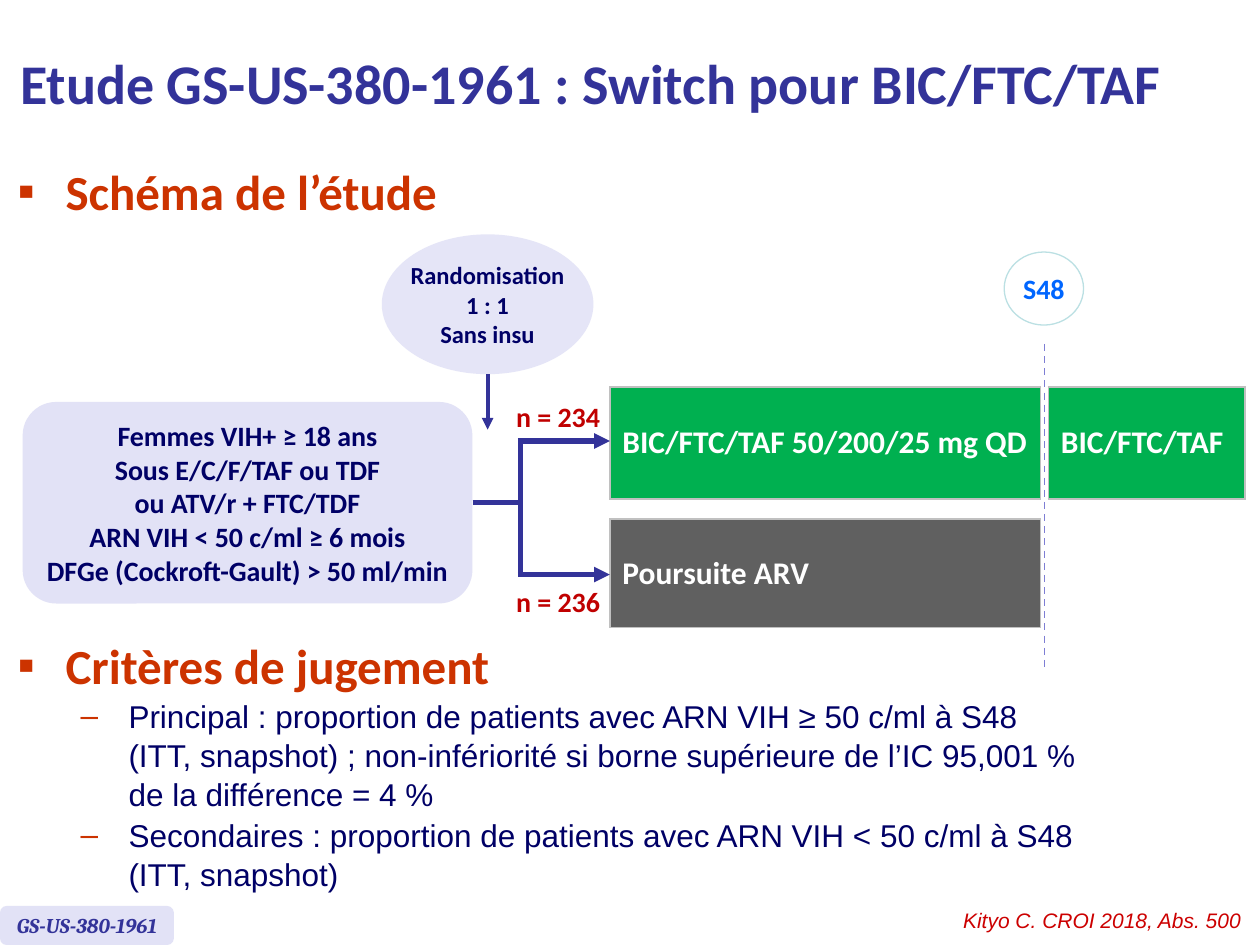
from copy import deepcopy
from typing import NamedTuple, Optional

from lxml.etree import SubElement
from pptx import Presentation
from pptx.dml.color import RGBColor
from pptx.enum.dml import MSO_LINE
from pptx.enum.shapes import MSO_CONNECTOR, MSO_SHAPE
from pptx.enum.text import MSO_ANCHOR, MSO_AUTO_SIZE, PP_ALIGN
from pptx.oxml.ns import qn
from pptx.util import Inches, Pt

COLUMNS, ROWS = 100, 75
UNIT = Inches(0.1)
COLORS = {
    "indigo": "333399", "navy": "000066", "orange": "CC3300", "red": "C00000",
    "citation": "CC0000", "green": "00B050", "gray": "606060", "white": "FFFFFF",
    "lavender": "E2E2F6", "pale": "E5E5F7", "border": "C0C0C0", "aqua": "BBE0E3",
    "blue": "0066FF", "violet": "7E7ED4",
}


class Area(NamedTuple):
    column: float
    row: float
    columns: float
    rows: float


class Node(NamedTuple):
    kind: MSO_SHAPE
    area: Area
    lines: list
    fill: str
    color: str
    size: int
    font: str = "Calibri"
    italic: bool = False
    outline: Optional[str] = None


class Arm(NamedTuple):
    area: Area
    text: str
    fill: str


class Label(NamedTuple):
    area: Area
    text: str
    format: dict


class Line(NamedTuple):
    start: tuple
    end: tuple
    color: str = "indigo"
    width: float = 3
    dashed: bool = False
    arrow: bool = False


class Item(NamedTuple):
    text: str
    level: int = 0


def grid(value: float) -> int:
    return round(value * UNIT)


def place(area: Area) -> list:
    return [grid(value) for value in area]


def rgb(name: str) -> RGBColor:
    return RGBColor.from_string(COLORS[name])


def write(paragraph, text: str, *, size: int, color: str, font: str = "Calibri",
          bold: bool = True, italic: bool = False, align=PP_ALIGN.LEFT) -> None:
    paragraph.text = text
    paragraph.alignment = align
    for run in paragraph.runs:
        run.font.name = font
        run.font.size = Pt(size)
        run.font.bold = bold
        run.font.italic = italic
        run.font.color.rgb = rgb(color)
    for line_break in paragraph._p.findall(qn("a:br")):
        line_break.append(deepcopy(paragraph.runs[0]._r.rPr))


def move(shape, area: Area) -> None:
    shape.left, shape.top, shape.width, shape.height = place(area)


def draw_list(placeholder, area: Area, items: list) -> None:
    move(placeholder, area)
    frame = placeholder.text_frame
    frame.auto_size = MSO_AUTO_SIZE.NONE
    for index, item in enumerate(items):
        paragraph = frame.add_paragraph() if index else frame.paragraphs[0]
        paragraph.level = item.level
        properties = paragraph._p.get_or_add_pPr()
        properties.set("marL", str(Inches(0.38 + item.level * 0.5)))
        properties.set("indent", str(Inches(-0.38)))
        bullet_color = SubElement(properties, qn("a:buClr"))
        SubElement(bullet_color, qn("a:srgbClr"), val=COLORS["orange"])
        SubElement(properties, qn("a:buFont"), typeface="Arial")
        SubElement(properties, qn("a:buChar"), char="–" if item.level else "▪")
        paragraph.space_before = Pt(0.8 if index else 0)
        paragraph.line_spacing = 1.04 if item.level else 1.0
        if item.level:
            write(paragraph, item.text, size=18, color="navy", font="Arial", bold=False)
        else:
            write(paragraph, item.text, size=28, color="orange")


def draw_node(slide, node: Node):
    shape = slide.shapes.add_shape(node.kind, *place(node.area))
    shape.shadow.inherit = False
    shape.fill.solid()
    shape.fill.fore_color.rgb = rgb(node.fill)
    if node.outline:
        shape.line.color.rgb = rgb(node.outline)
        shape.line.width = Pt(0.75)
    else:
        shape.line.fill.background()
    frame = shape.text_frame
    frame.word_wrap = False
    frame.vertical_anchor = MSO_ANCHOR.MIDDLE
    for index, text in enumerate(node.lines):
        paragraph = frame.add_paragraph() if index else frame.paragraphs[0]
        write(paragraph, text, size=node.size, color=node.color, font=node.font,
              italic=node.italic, align=PP_ALIGN.CENTER)
    return shape


def draw_arm(slide, arm: Arm) -> None:
    table = slide.shapes.add_table(1, 1, *place(arm.area)).table
    table.first_row = table.horz_banding = False
    cell = table.cell(0, 0)
    properties = cell._tc.get_or_add_tcPr()
    for side in ("lnL", "lnR", "lnT", "lnB"):
        border = SubElement(properties, qn(f"a:{side}"), w=str(Pt(1)))
        fill = SubElement(border, qn("a:solidFill"))
        SubElement(fill, qn("a:srgbClr"), val=COLORS["border"])
    cell.fill.solid()
    cell.fill.fore_color.rgb = rgb(arm.fill)
    cell.vertical_anchor = MSO_ANCHOR.MIDDLE
    write(cell.text_frame.paragraphs[0], arm.text, size=18, color="white")


def draw_label(slide, label: Label) -> None:
    frame = slide.shapes.add_textbox(*place(label.area)).text_frame
    frame.word_wrap = True
    write(frame.paragraphs[0], label.text, **label.format)


def draw_line(slide, line: Line):
    points = [grid(value) for value in (*line.start, *line.end)]
    connector = slide.shapes.add_connector(MSO_CONNECTOR.STRAIGHT, *points)
    connector.line.color.rgb = rgb(line.color)
    connector.line.width = Pt(line.width)
    if line.dashed:
        connector.line.dash_style = MSO_LINE.DASH
    if line.arrow:
        SubElement(connector.line._get_or_add_ln(), qn("a:tailEnd"), type="triangle")
    SubElement(connector._element.spPr, qn("a:effectLst"))
    return connector


def main() -> None:
    presentation = Presentation()
    presentation.slide_width, presentation.slide_height = COLUMNS * UNIT, ROWS * UNIT
    slide = presentation.slides.add_slide(presentation.slide_layouts[3])
    title, scheme, criteria = slide.placeholders

    move(title, Area(0.6, 0.5, 94.3, 12.1))
    title.text_frame.vertical_anchor = MSO_ANCHOR.MIDDLE
    title.text_frame.auto_size = MSO_AUTO_SIZE.NONE
    write(title.text_frame.paragraphs[0], "Etude GS-US-380-1961 : Switch pour BIC/FTC/TAF",
          size=32, color="indigo")
    draw_list(scheme, Area(0.4, 12.3, 42.5, 6.3), [Item("Schéma de l’étude")])
    draw_list(criteria, Area(0.4, 49.9, 95.5, 21.5), [
        Item("Critères de jugement"),
        Item("Principal : proportion de patients avec ARN VIH ≥ 50 c/ml à S48\n"
             "(ITT, snapshot) ; non-infériorité si borne supérieure de l’IC 95,001 %\n"
             "de la différence = 4 %", 1),
        Item("Secondaires : proportion de patients avec ARN VIH < 50 c/ml à S48\n"
             "(ITT, snapshot)", 1),
    ])

    arm_left, arm_width, spine = 48.4, 34.2, 41.3
    for arm in (
        Arm(Area(arm_left, 30.7, arm_width, 8.9), "BIC/FTC/TAF 50/200/25 mg QD", "green"),
        Arm(Area(arm_left, 41.2, arm_width, 8.6), "Poursuite ARV", "gray"),
        Arm(Area(83.2, 30.7, 15.6, 8.9), "BIC/FTC/TAF", "green"),
    ):
        draw_arm(slide, arm)

    population = draw_node(slide, Node(
        MSO_SHAPE.ROUNDED_RECTANGLE, Area(1.8, 31.9, 35.7, 16),
        ["Femmes VIH+ ≥ 18 ans", "Sous E/C/F/TAF ou TDF\nou ATV/r + FTC/TDF",
         "ARN VIH < 50 c/ml ≥ 6 mois", "DFGe (Cockroft-Gault) > 50 ml/min"],
        "lavender", "navy", 16))
    for node in (
        Node(MSO_SHAPE.OVAL, Area(30.3, 18.6, 16.8, 11.1),
             ["Randomisation", "1 : 1", "Sans insu"], "pale", "navy", 14),
        Node(MSO_SHAPE.OVAL, Area(79.7, 20, 6.3, 5.8), ["S48"], "white", "blue", 16,
             outline="aqua"),
        Node(MSO_SHAPE.ROUNDED_RECTANGLE, Area(0, 71.9, 13.8, 3.1), ["GS-US-380-1961"],
             "lavender", "indigo", 12, "Cambria", True),
    ):
        draw_node(slide, node)

    stem = draw_line(slide, Line((37.5, 39.9), (spine, 39.9)))
    stem.begin_connect(population, 3)
    for line in (
        Line((38.7, 29.7), (38.7, 34.1), width=2.25, arrow=True),
        Line((spine, 35), (spine, 45.6)),
        *(Line((spine - 0.2, row), (arm_left, row), arrow=True) for row in (35, 45.6)),
        Line((82.9, 27.3), (82.9, 53.2), "violet", 1, dashed=True),
    ):
        draw_line(slide, line)

    count_format = dict(size=16, color="red", align=PP_ALIGN.CENTER)
    for label in (
        Label(Area(39.8, 31.2, 9, 3.7), "n = 234", count_format),
        Label(Area(39.8, 45.9, 9, 3.7), "n = 236", count_format),
        Label(Area(64.5, 71.5, 35, 3), "Kityo C. CROI 2018, Abs. 500",
              dict(size=12, color="citation", font="Arial", bold=False, italic=True,
                   align=PP_ALIGN.RIGHT)),
    ):
        draw_label(slide, label)

    presentation.save("out.pptx")


if __name__ == "__main__":
    main()
